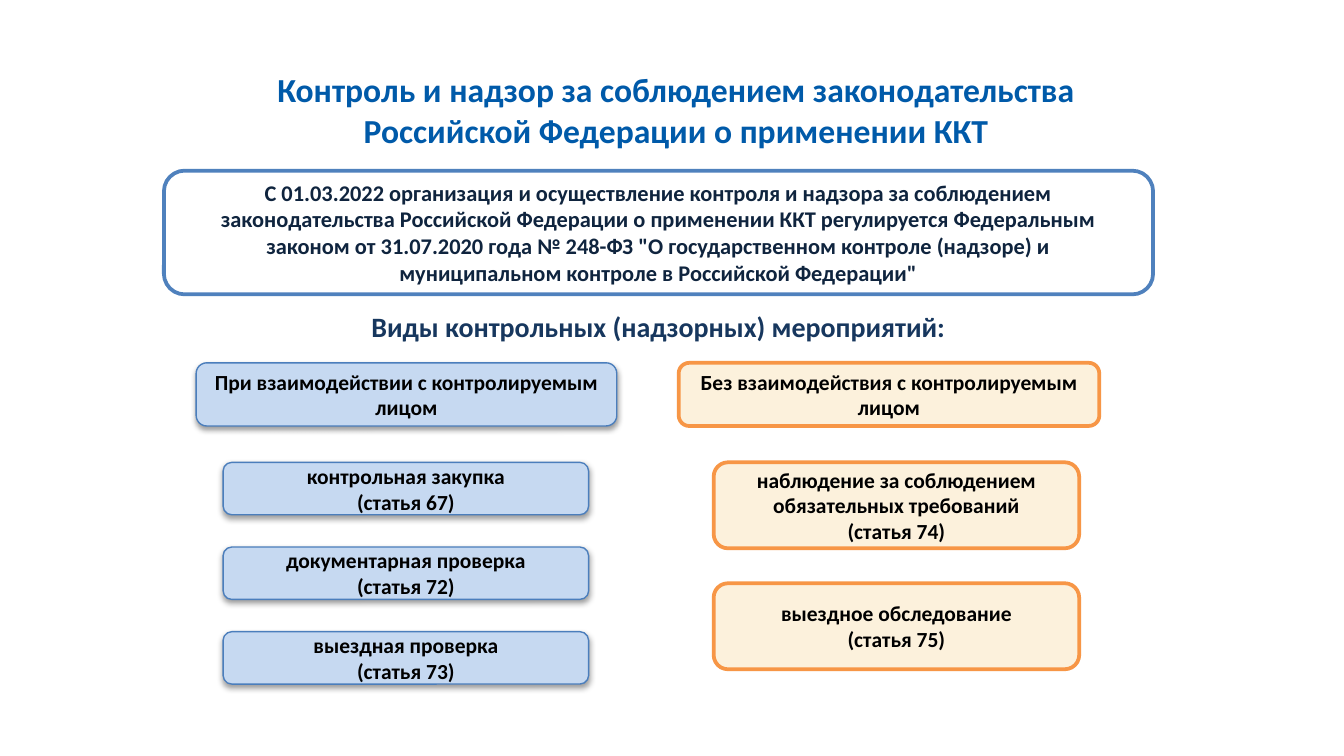
from lxml import etree
from pptx import Presentation
from pptx.dml.color import RGBColor
from pptx.enum.shapes import MSO_SHAPE
from pptx.enum.text import MSO_ANCHOR, PP_ALIGN
from pptx.oxml.ns import qn
from pptx.util import Inches, Pt

ROUNDED = MSO_SHAPE.ROUNDED_RECTANGLE
MIDDLE = MSO_ANCHOR.MIDDLE
CENTER = PP_ALIGN.CENTER

TITLE_BLUE = RGBColor(0x00, 0x5A, 0xA9)
HEADING_NAVY = RGBColor(0x17, 0x37, 0x5E)
LAW_NAVY = RGBColor(0x0F, 0x24, 0x3E)
LAW_BORDER = RGBColor(0x4F, 0x81, 0xBD)
BLUE_FILL = RGBColor(0xC6, 0xD9, 0xF1)
BLUE_BORDER = RGBColor(0x4B, 0x7E, 0xBC)
ORANGE_FILL = RGBColor(0xFC, 0xF1, 0xDC)
ORANGE_BORDER = RGBColor(0xF7, 0x96, 0x46)
WHITE = RGBColor(0xFF, 0xFF, 0xFF)
BLACK = RGBColor(0x00, 0x00, 0x00)

# Widescreen 16:9 slide
presentation = Presentation()
presentation.slide_width = Inches(10)
presentation.slide_height = Inches(10 * 9 / 16)
slide = presentation.slides.add_slide(presentation.slide_layouts[6])


def write_text(shape, lines, size, color):
    """Fill a shape with centred bold paragraphs."""
    frame = shape.text_frame
    frame.word_wrap = True
    frame.vertical_anchor = MIDDLE
    frame.text = "\n".join(lines)
    for paragraph in frame.paragraphs:
        paragraph.alignment = CENTER
        paragraph.font.name = "Calibri"
        paragraph.font.size = Pt(size)
        paragraph.font.bold = True
        paragraph.font.color.rgb = color


def add_box(left, top, width, height, fill, border, border_width, shadowed=False):
    """Add a rounded box, with a soft shadow below it if asked."""
    box = slide.shapes.add_shape(
        ROUNDED, Inches(left), Inches(top), Inches(width), Inches(height))
    box.fill.solid()
    box.fill.fore_color.rgb = fill
    box.line.color.rgb = border
    box.line.width = Pt(border_width)
    box.shadow.inherit = False
    if shadowed:
        effects = box._element.spPr.find(qn("a:effectLst"))
        shadow = etree.SubElement(
            effects, qn("a:outerShdw"), blurRad=str(Pt(3.1)), dist=str(Pt(1.6)),
            dir="5400000", rotWithShape="0")
        shade = etree.SubElement(shadow, qn("a:srgbClr"), val="000000")
        etree.SubElement(shade, qn("a:alpha"), val="38000")
    return box


# Title
title = slide.shapes.add_textbox(Inches(1.19), Inches(0.61), Inches(7.68), Inches(0.41))
write_text(title, ["Контроль и надзор за соблюдением законодательства",
                   "Российской Федерации о применении ККТ"], 18, TITLE_BLUE)

# Governing law, with side margins that keep its four lines even
law = add_box(1.22, 1.27, 7.36, 0.92, WHITE, LAW_BORDER, 2)
law.text_frame.margin_left = law.text_frame.margin_right = Inches(0.15)
write_text(law, [
    "С 01.03.2022 организация и осуществление контроля и надзора за соблюдением "
    "законодательства Российской Федерации о применении ККТ регулируется Федеральным "
    "законом от 31.07.2020 года № 248-ФЗ \"О государственном контроле (надзоре) и "
    "муниципальном контроле в Российской Федерации\""], 12, LAW_NAVY)

# Heading of the two columns
heading = slide.shapes.add_textbox(Inches(1.66), Inches(2.24), Inches(6.48), Inches(0.37))
write_text(heading, ["Виды контрольных (надзорных) мероприятий:"], 15, HEADING_NAVY)

# Columns: header, header left, item left, item height, item step, style, items
columns = [
    ("При взаимодействии с контролируемым лицом", 1.46, 1.66, 0.39, 0.63,
     (BLUE_FILL, BLUE_BORDER, 0.75, True),
     [("контрольная закупка", 67), ("документарная проверка", 72),
      ("выездная проверка", 73)]),
    ("Без взаимодействия с контролируемым лицом", 5.05, 5.31, 0.64, 0.9,
     (ORANGE_FILL, ORANGE_BORDER, 2),
     [("наблюдение за соблюдением обязательных требований", 74),
      ("выездное обследование", 75)]),
]
for header, header_left, item_left, item_height, step, style, items in columns:
    header_box = add_box(header_left, 2.7, 3.13, 0.47, *style)
    write_text(header_box, [header], 11.5, BLACK)
    for row, (name, article) in enumerate(items):
        item_box = add_box(item_left, 3.44 + row * step, 2.72, item_height, *style)
        write_text(item_box, [name, f"(статья {article})"], 11.5, BLACK)

presentation.save("out.pptx")
